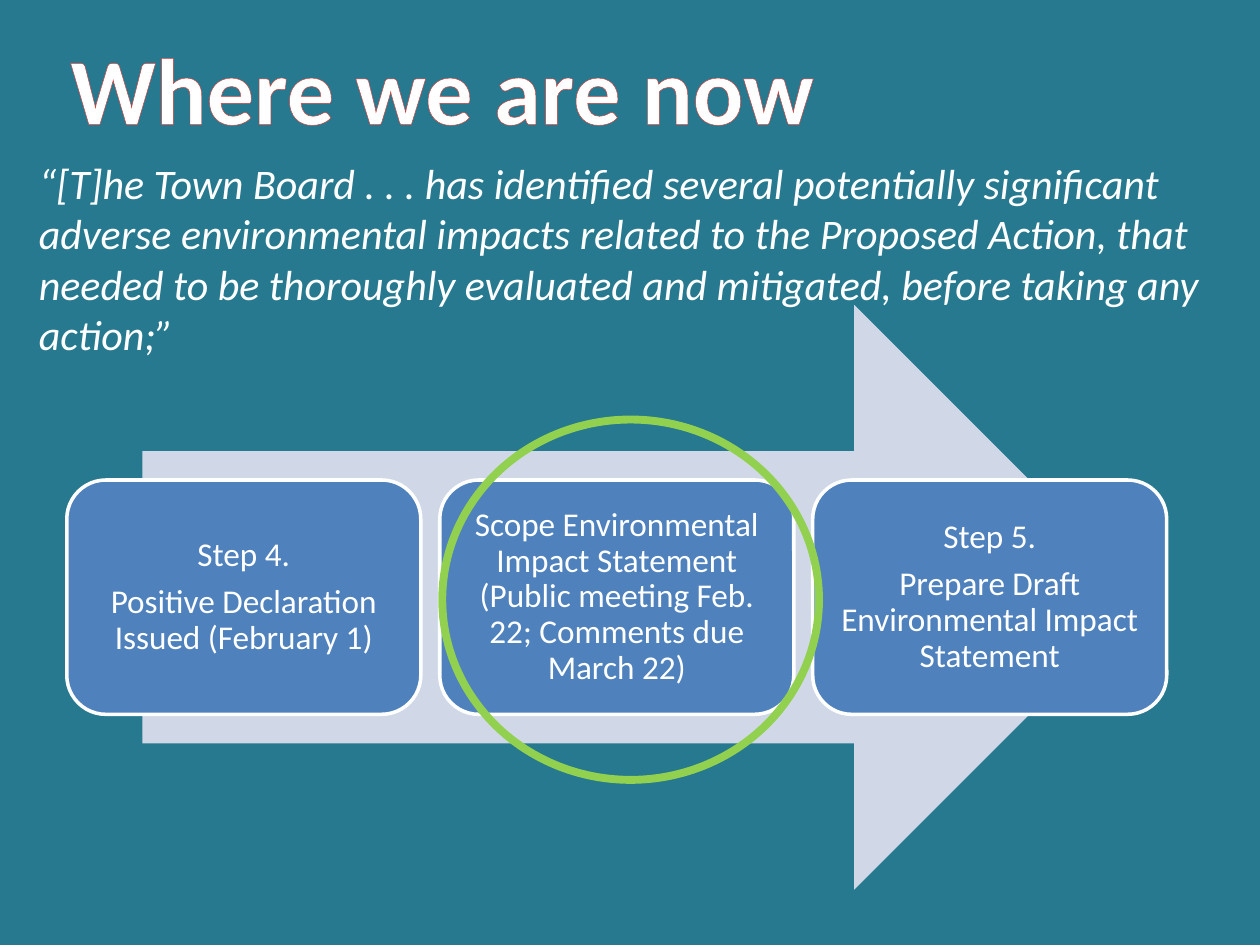
from lxml.etree import SubElement
from pptx import Presentation
from pptx.dml.color import RGBColor
from pptx.enum.shapes import MSO_SHAPE as Kind
from pptx.enum.text import MSO_ANCHOR as Anchor, MSO_AUTO_SIZE as Fit, PP_ALIGN as Align
from pptx.oxml.ns import qn
from pptx.util import Inches, Pt

TEAL = RGBColor(0x26, 0x79, 0x8E)
PALE = RGBColor(0xD0, 0xD8, 0xE8)
BLUE = RGBColor(0x4F, 0x81, 0xBD)
GREEN = RGBColor(0x92, 0xD0, 0x50)
RED = RGBColor(0xD7, 0x3A, 0x36)
WHITE = RGBColor(0xFF, 0xFF, 0xFF)

LEFT, PITCH = 0.53, 2.96
CARD_TOP, CARD_W, CARD_H = 3.81, 2.81, 1.86
STEPS = [
    ["Step 4.", "Positive Declaration Issued (February 1)"],
    ["Scope Environmental Impact Statement (Public meeting Feb. 22; Comments due March 22)"],
    ["Step 5.", "Prepare Draft Environmental Impact Statement"],
]
QUOTE = (
    "“[T]he Town Board . . . has identified several potentially significant "
    "adverse environmental impacts related to the Proposed Action, that needed "
    "to be thoroughly evaluated and mitigated, before taking any action;”"
)


def add_shape(slide, kind, box, fill=None, line=None, width=1):
    shape = slide.shapes.add_shape(kind, *map(Inches, box))
    shape.shadow.inherit = False
    if fill is None:
        shape.fill.background()
    else:
        shape.fill.solid()
        shape.fill.fore_color.rgb = fill
    if line is None:
        shape.line.fill.background()
    else:
        shape.line.color.rgb = line
        shape.line.width = Pt(width)
    return shape


def write(frame, lines, size, bold=False, italic=False, align=Align.LEFT,
          spacing=None, after=None, edge=None):
    """Fill a text frame, one paragraph a line; edge colours the letter outline."""
    for i, line in enumerate(lines):
        para = frame.add_paragraph() if i else frame.paragraphs[0]
        para.alignment = align
        para.line_spacing = spacing
        para.space_after = after
        run = para.add_run()
        run.text = line
        font = run.font
        font.name, font.size = "Calibri", Pt(size)
        font.bold, font.italic = bold, italic
        font.color.rgb = WHITE
        if edge is not None:
            outline(run, edge, 1.42)


def outline(run, color, width):
    props = run.font._element
    ln = SubElement(props, qn("a:ln"), w=str(Pt(width)))
    fill = SubElement(ln, qn("a:solidFill"))
    SubElement(fill, qn("a:srgbClr"), val=str(color))
    props.insert(0, ln)


def add_text(slide, box, text, size, wrap=True, **style):
    frame = slide.shapes.add_textbox(*map(Inches, box)).text_frame
    frame.word_wrap = wrap
    frame.auto_size = Fit.SHAPE_TO_FIT_TEXT
    write(frame, [text], size, **style)


def add_card(slide, col, lines):
    box = (LEFT + col * PITCH, CARD_TOP, CARD_W, CARD_H)
    frame = add_shape(slide, Kind.ROUNDED_RECTANGLE, box, BLUE, WHITE, 2).text_frame
    frame.word_wrap = True
    frame.vertical_anchor = Anchor.MIDDLE
    frame.margin_left = frame.margin_right = Inches(0.08)
    frame.margin_top = frame.margin_bottom = Inches(0.08)
    write(frame, lines, 19, align=Align.CENTER, spacing=0.9, after=Pt(6.65))


def main():
    deck = Presentation()
    deck.slide_width, deck.slide_height = Inches(10), Inches(7.5)
    slide = deck.slides.add_slide(deck.slide_layouts[6])
    slide.background.fill.solid()
    slide.background.fill.fore_color.rgb = TEAL

    add_shape(slide, Kind.RIGHT_ARROW, (1.13, 2.42, 7.97, 4.64), PALE)
    for col, lines in enumerate(STEPS):
        add_card(slide, col, lines)
    add_text(slide, (0.43, 0.19, 6.16, 1.01), "Where we are now", 54, wrap=False,
             bold=True, align=Align.CENTER, edge=RED)
    add_shape(slide, Kind.OVAL, (3.51, 3.33, 2.99, 2.86), line=GREEN, width=4.5)
    add_text(slide, (0.21, 1.2, 9.58, 1.72), QUOTE, 24, italic=True)

    deck.save("out.pptx")


if __name__ == "__main__":
    main()
